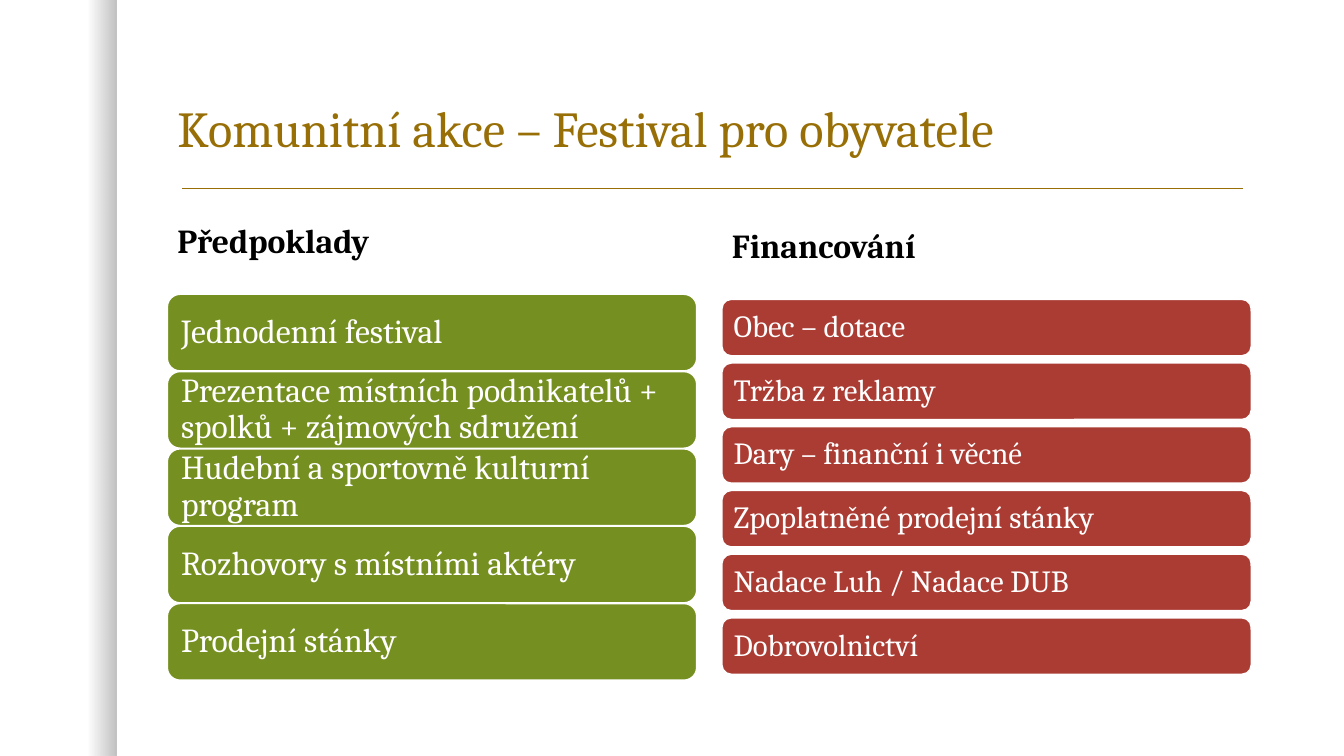
from dataclasses import dataclass

from lxml.etree import SubElement
from pptx import Presentation
from pptx.dml.color import RGBColor
from pptx.enum.shapes import MSO_CONNECTOR as Connector, MSO_SHAPE as Preset
from pptx.enum.text import MSO_ANCHOR as Anchor, MSO_AUTO_SIZE as AutoSize, PP_ALIGN as Align
from pptx.oxml.ns import qn
from pptx.util import Inches, Pt

FONT = "Cambria"
GOLD = "986F07"
WHITE = "FFFFFF"
BLACK = "000000"
COLUMN_WIDTH = 5.25


@dataclass
class Column:
    heading: str
    left: float
    heading_height: float
    top: float
    pitch: float
    bar_height: float
    inset: float
    size: int
    color: str
    items: list[str]


COLUMNS = [
    Column("Předpoklady", 1.66, 0.81, 2.92, 0.767, 0.76, 0.1, 24, "758F21", [
        "Jednodenní festival",
        "Prezentace místních podnikatelů + spolků + zájmových sdružení",
        "Hudební a sportovně kulturní program",
        "Rozhovory s místními aktéry",
        "Prodejní stánky",
    ]),
    Column("Financování", 7.16, 0.92, 2.97, 0.632, 0.56, 0.09, 22, "AB3C33", [
        "Obec – dotace",
        "Tržba z reklamy",
        "Dary – finanční i věcné",
        "Zpoplatněné prodejní stánky",
        "Nadace Luh / Nadace DUB",
        "Dobrovolnictví",
    ]),
]


def rgb(color: str) -> RGBColor:
    return RGBColor.from_string(color)


def write(shape, text: str, size: int, color: str, anchor=Anchor.MIDDLE, bold: bool = False) -> None:
    frame = shape.text_frame
    frame.text = text
    frame.word_wrap = True
    frame.auto_size = AutoSize.NONE
    frame.vertical_anchor = anchor
    para = frame.paragraphs[0]
    para.alignment = Align.LEFT
    para.line_spacing = 0.9
    para.font.name = FONT
    para.font.size = Pt(size)
    para.font.bold = bold
    para.font.color.rgb = rgb(color)


def add_edge_shade(page) -> None:
    """Draw the left strip that fades from clear to a quarter black."""
    strip = page.shapes.add_shape(Preset.RECTANGLE, 0, 0, Inches(1.16), Inches(7.5))
    strip.shadow.inherit = False
    strip.line.fill.background()
    strip.fill.gradient()
    strip.fill.gradient_angle = 0
    for stop, position, alpha in zip(strip.fill.gradient_stops, (0.75, 1), (0, 25000)):
        stop.position = position
        stop.color.rgb = rgb(BLACK)
    for color, alpha in zip(strip.element.spPr.iter(qn("a:srgbClr")), (0, 25000)):
        SubElement(color, qn("a:alpha"), val=str(alpha))


def add_title(page) -> None:
    title = page.shapes.title
    title.left, title.top = Inches(1.66), Inches(0.29)
    title.width, title.height = Inches(10.75), Inches(1.33)
    write(title, "Komunitní akce – Festival pro obyvatele", 36, GOLD, Anchor.BOTTOM)


def add_title_rule(page) -> None:
    rule = page.shapes.add_connector(
        Connector.STRAIGHT, Inches(1.81), Inches(1.87), Inches(12.33), Inches(1.87))
    rule.line.color.rgb = rgb(GOLD)
    rule.line.width = Pt(1)
    SubElement(rule.element.spPr, qn("a:effectLst"))


def add_bar(page, column: Column, top: float, text: str) -> None:
    bar = page.shapes.add_shape(
        Preset.ROUNDED_RECTANGLE, Inches(column.left), Inches(top),
        Inches(COLUMN_WIDTH), Inches(column.bar_height))
    bar.shadow.inherit = False
    bar.fill.solid()
    bar.fill.fore_color.rgb = rgb(column.color)
    bar.line.color.rgb = rgb(WHITE)
    bar.line.width = Pt(1)
    frame = bar.text_frame
    frame.margin_left = frame.margin_right = Inches(column.inset)
    frame.margin_top = frame.margin_bottom = Inches(column.inset)
    write(bar, text, column.size, WHITE)


def add_column(page, column: Column) -> None:
    heading = page.shapes.add_textbox(
        Inches(column.left), Inches(2), Inches(COLUMN_WIDTH), Inches(column.heading_height))
    write(heading, column.heading, 24, BLACK, bold=True)
    for row, item in enumerate(column.items):
        add_bar(page, column, column.top + row * column.pitch, item)


def main() -> None:
    deck = Presentation()
    deck.slide_width, deck.slide_height = Inches(13.33), Inches(7.5)
    page = deck.slides.add_slide(deck.slide_layouts[5])
    add_edge_shade(page)
    add_title_rule(page)
    add_title(page)
    for column in COLUMNS:
        add_column(page, column)
    deck.save("out.pptx")


if __name__ == "__main__":
    main()
